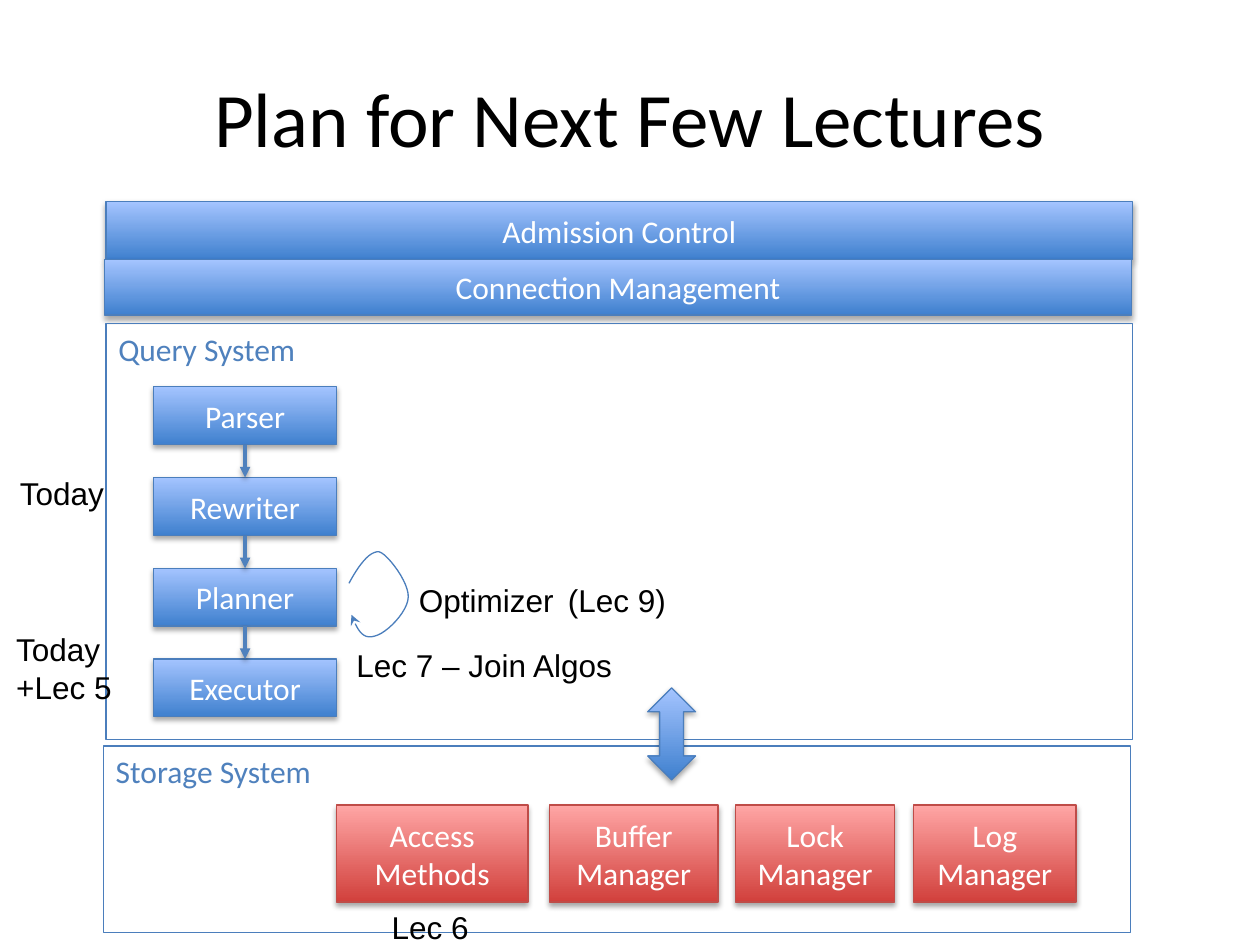
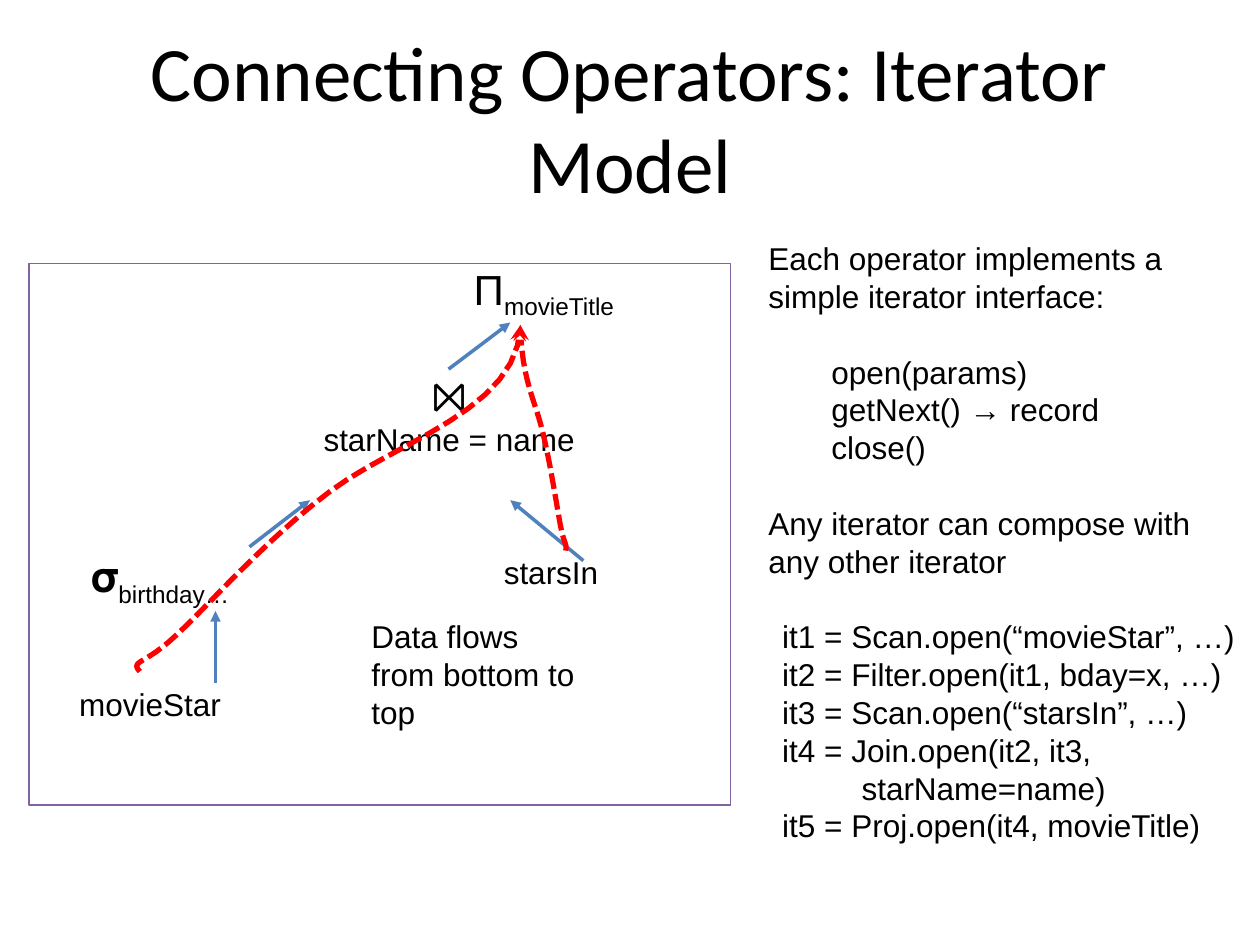
from lxml import etree
from pptx import Presentation
from pptx.dml import color as dml_color
from pptx.enum import dml, shapes, text
from pptx.oxml import ns
from pptx.util import Emu, Pt

PX = 9144
BODY_FONT = "Arial"
BOX_FONT = "Calibri"
BLACK, WHITE = "000000", "FFFFFF"
EDGE_BLUE, ACCENT_BLUE, PURPLE, RED = "4B7EBC", "4F81BD", "8064A2", "FF0000"
BLUE_BOX = {"stops": ("3F80CE", "A4C4FF"), "edge": EDGE_BLUE}
RED_BOX = {"stops": ("D1403C", "FFA6A5"), "edge": "BF4C48"}
NO_MARGINS = dict.fromkeys(
    ("margin_left", "margin_top", "margin_right", "margin_bottom"), 0
)
CENTER = text.PP_ALIGN.CENTER
MIDDLE = text.MSO_ANCHOR.MIDDLE
BLANK_LINE = 21.6


def px(*lengths):
    return [Emu(round(length * PX)) for length in lengths]


def rgb(value):
    return dml_color.RGBColor.from_string(value)


def apply_format(target, values):
    for name, value in values.items():
        setattr(target, name, value)


def inside(box, left, top, width, height):
    return box[0] + left, box[1] + top, width, height


def shift(box, point):
    return box[0] + point[0], box[1] + point[1]


def add_effects(shape, alpha=None, distance=1.8):
    properties = shape._element.spPr
    effects = properties.find(ns.qn("a:effectLst"))
    if effects is None:
        effects = etree.SubElement(properties, ns.qn("a:effectLst"))
    if alpha is None:
        return
    shadow = etree.SubElement(
        effects,
        ns.qn("a:outerShdw"),
        blurRad=str(Pt(3.1)),
        dist=str(Pt(distance)),
        dir="5400000",
        rotWithShape="0",
    )
    shade = etree.SubElement(shadow, ns.qn("a:srgbClr"), val=BLACK)
    etree.SubElement(shade, ns.qn("a:alpha"), val=str(alpha * 1000))


def style_line(line, color, width, arrow=None, dash=None):
    line.color.rgb = rgb(color)
    line.width = Pt(width)
    if dash:
        line.dash_style = dash
    if arrow:
        etree.SubElement(line._get_or_add_ln(), ns.qn("a:tailEnd"), type=arrow)


def write_run(paragraph, content, font, size, color, baseline=None):
    run = paragraph.add_run()
    run.text = content
    apply_format(run.font, {"name": font, "size": Pt(size)})
    run.font.color.rgb = rgb(color)
    if baseline:
        run.font._element.set("baseline", str(baseline * 1000))


def write(shape, lines, font=BODY_FONT, size=18, color=BLACK, align=None, **frame_format):
    frame = shape.text_frame
    apply_format(frame, {"word_wrap": True, "vertical_anchor": text.MSO_ANCHOR.TOP})
    apply_format(frame, frame_format)
    for index, line in enumerate(lines):
        if isinstance(line, str):
            line = {"text": line}
        paragraph = frame.add_paragraph() if index else frame.paragraphs[0]
        paragraph.alignment = align or text.PP_ALIGN.LEFT
        if "before" in line:
            paragraph.space_before = Pt(line["before"])
        if "indent" in line:
            paragraph._p.get_or_add_pPr().set("marL", str(line["indent"] * PX))
        line_size = line.get("size", size)
        write_run(paragraph, line["text"], font, line_size, color)
        if "subscript" in line:
            write_run(paragraph, line["subscript"], font, line_size, color, -25)


def add_label(slide, box, *lines, fill=None, **text_format):
    label = slide.shapes.add_textbox(*px(*box))
    if fill:
        label.fill.solid()
        label.fill.fore_color.rgb = rgb(fill)
    write(label, lines, **text_format)


def add_title(slide, title):
    add_label(slide, (50, 30, 900, 125), title, font=BOX_FONT, size=44,
              align=CENTER, vertical_anchor=MIDDLE)


def add_panel(slide, box, heading=None, edge=EDGE_BLUE, fill=None):
    panel = slide.shapes.add_shape(shapes.MSO_SHAPE.RECTANGLE, *px(*box))
    panel.shadow.inherit = False
    if fill:
        panel.fill.solid()
        panel.fill.fore_color.rgb = rgb(fill)
    else:
        panel.fill.background()
    style_line(panel.line, edge, 0.75)
    if heading:
        write(panel, [heading], font=BOX_FONT, color=ACCENT_BLUE)


def add_glossy(slide, box, caption=None, look=BLUE_BOX, kind=shapes.MSO_SHAPE.RECTANGLE):
    shape = slide.shapes.add_shape(kind, *px(*box))
    shape.shadow.inherit = False
    shape.fill.gradient()
    shape.fill.gradient_angle = 90
    for stop, position, color in zip(shape.fill.gradient_stops, (0, 1), look["stops"]):
        stop.position = position
        stop.color.rgb = rgb(color)
    style_line(shape.line, look["edge"], 0.75)
    add_effects(shape, alpha=35)
    if caption:
        write(shape, [caption], font=BOX_FONT, color=WHITE, align=CENTER,
              vertical_anchor=MIDDLE)


def add_arrow(slide, start, end, shadow_alpha=None):
    arrow = slide.shapes.add_connector(
        shapes.MSO_CONNECTOR.STRAIGHT, *px(*start, *end)
    )
    style_line(arrow.line, ACCENT_BLUE, 2, "triangle")
    add_effects(arrow, shadow_alpha, 1.6)


def bezier(start, control_1, control_2, end, steps=12):
    for step in range(1, steps + 1):
        t = step / steps
        weights = ((1 - t) ** 3, 3 * t * (1 - t) ** 2, 3 * t**2 * (1 - t), t**3)
        corners = (start, control_1, control_2, end)
        yield tuple(sum(w * c[axis] for w, c in zip(weights, corners)) for axis in (0, 1))


def add_curve(slide, box, points, **line_format):
    points = [shift(box, point) for point in points]
    outline = [
        px(*point)
        for first in range(0, len(points) - 1, 3)
        for point in bezier(*points[first:first + 4])
    ]
    builder = slide.shapes.build_freeform(*px(*points[0]))
    builder.add_line_segments(outline, close=False)
    curve = builder.convert_to_shape()
    curve.shadow.inherit = False
    curve.fill.background()
    style_line(curve.line, arrow="stealth", **line_format)


def add_entry_layers(slide, box):
    add_glossy(slide, inside(box, 1, 0, 815, 46), "Admission Control")
    add_glossy(slide, inside(box, 0, 46, 815, 44), "Connection Management")


def add_query_system(slide, box):
    add_panel(slide, box, "Query System")
    left, top, width, height, pitch = 38, 50, 145, 46, 72
    stages = ("Parser", "Rewriter", "Planner", "Executor")
    for index, stage in enumerate(stages):
        add_glossy(slide, inside(box, left, top + index * pitch, width, height), stage)
    for index in range(len(stages) - 1):
        center, bottom = left + width / 2, top + index * pitch + height
        add_arrow(slide, shift(box, (center, bottom)),
                  shift(box, (center, bottom + pitch - height)), 38)
    optimizer_loop = [
        (193, 206), (200, 193), (209, 180), (217, 181), (224, 183), (241, 206),
        (240, 217), (240, 228), (223, 246), (213, 248), (203, 251), (199, 241),
        (195, 231),
    ]
    add_curve(slide, box, optimizer_loop, color=EDGE_BLUE, width=0.75)
    add_label(slide, inside(box, 238, 199, 128, 40), "Optimizer",
              align=CENTER, word_wrap=False)
    add_label(slide, inside(box, 357, 199, 124, 40), "(Lec 9)")
    add_label(slide, inside(box, 189, 251, 225, 40), "Lec 7 – Join Algos", word_wrap=False)
    add_label(slide, inside(box, -78, 114, 98, 40), "Today")
    add_label(slide, inside(box, -81, 238, 98, 71), "Today+Lec 5")


def add_storage_system(slide, box):
    add_panel(slide, box, "Storage System")
    managers = (
        ("Access Methods", 185, 152),
        ("Buffer Manager", 354, 134),
        ("Lock Manager", 502, 126),
        ("Log Manager", 643, 129),
    )
    for caption, left, width in managers:
        add_glossy(slide, inside(box, left, 47, width, 77), caption, RED_BOX)
    add_label(slide, inside(box, 219, 124, 98, 40), "Lec 6")
    add_glossy(slide, inside(box, 432, -46, 38, 73),
               kind=shapes.MSO_SHAPE.UP_DOWN_ARROW)


def add_operator_tree(slide, box):
    add_panel(slide, box, edge=PURPLE, fill=WHITE)
    add_label(slide, inside(box, 122, 84, 423, 207), {"text": "⨝", "size": 24},
              "starName = name", fill=WHITE, align=CENTER, **NO_MARGINS)
    add_label(slide, inside(box, 49, 228, 378, 83),
              {"text": "𝛔", "subscript": "birthday…", "size": 24}, fill=WHITE, **NO_MARGINS)
    add_label(slide, inside(box, 30, 330, 397, 83), "movieStar", fill=WHITE)
    tree_edges = (
        ((333, 84), (382, 47)),
        ((175, 225), (223, 188)),
        ((148, 333), (148, 276)),
        ((440, 236), (382, 188)),
    )
    for start, end in tree_edges:
        add_arrow(slide, shift(box, start), shift(box, end))
    add_label(slide, inside(box, 353, 0, 209, 138),
              {"text": "Π", "subscript": "movieTitle", "size": 24}, **NO_MARGINS)
    add_label(slide, inside(box, 367, 225, 178, 145), "starsIn")
    movie_star_flow = [
        (88, 324), (80, 315), (92, 319), (117, 295), (143, 271),
        (187, 220), (239, 181), (292, 141), (389, 116), (390, 49),
    ]
    stars_in_flow = [
        (426, 228), (427, 222), (425, 224), (422, 209), (419, 193),
        (414, 160), (408, 135), (402, 109), (391, 93), (390, 49),
    ]
    for flow in (movie_star_flow, stars_in_flow):
        add_curve(slide, box, flow, color=RED, width=3, dash=dml.MSO_LINE.SQUARE_DOT)
    add_label(slide, inside(box, 262, 276, 187, 101), "Data flows from bottom to top")


def add_iterator_notes(slide, box):
    add_label(
        slide,
        inside(box, 0, 0, 385, 283),
        "Each operator implements a simple iterator interface:",
        {"text": "open(params)", "indent": 50, "before": BLANK_LINE},
        {"text": "getNext() → record", "indent": 50},
        {"text": "close()", "indent": 50},
        {"text": "Any iterator can compose with any other iterator", "before": BLANK_LINE},
    )
    add_label(
        slide,
        inside(box, 11, 300, 383, 222),
        "it1 = Scan.open(“movieStar”, …)",
        "it2 = Filter.open(it1, bday=x, …)",
        "it3 = Scan.open(“starsIn”, …)",
        "it4 = Join.open(it2, it3,",
        {"text": "starName=name)", "indent": 63},
        "it5 = Proj.open(it4, movieTitle)",
        word_wrap=False,
    )


def build_lecture_plan(slide):
    add_title(slide, "Plan for Next Few Lectures")
    add_entry_layers(slide, (83, 160, 816, 90))
    add_query_system(slide, (84, 257, 815, 330))
    add_storage_system(slide, (82, 592, 815, 148))


def build_iterator_model(slide):
    add_title(slide, "Connecting Operators: Iterator Model")
    add_operator_tree(slide, (23, 209, 557, 430))
    add_iterator_notes(slide, (600, 185, 394, 522))


def main():
    presentation = Presentation()
    presentation.slide_width, presentation.slide_height = px(1000, 750)
    for build in (build_lecture_plan, build_iterator_model):
        build(presentation.slides.add_slide(presentation.slide_layouts[6]))
    presentation.save("out.pptx")


if __name__ == "__main__":
    main()
